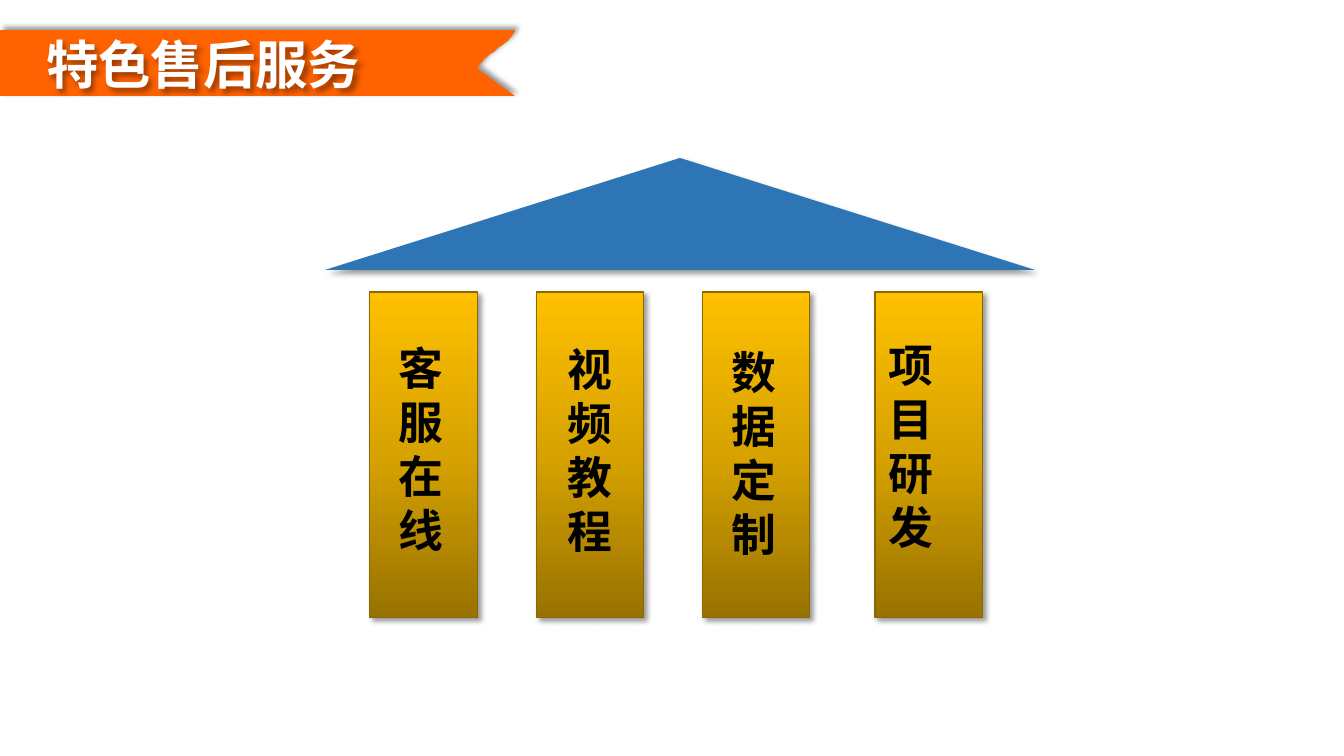
from copy import deepcopy
from dataclasses import dataclass

from lxml.etree import SubElement
from pptx import Presentation
from pptx.dml.color import RGBColor
from pptx.enum.shapes import MSO_SHAPE
from pptx.enum.text import MSO_ANCHOR as Anchor, MSO_AUTO_SIZE as Fit, PP_ALIGN as Align
from pptx.oxml.ns import qn
from pptx.util import Pt

PX = 914400 / 100.8
FONT = "Noto Sans CJK SC"
GOLD = ((0, "977200"), (0.5, "D7A200"), (1, "FFC000"))


@dataclass
class Pillar:
    """A column of the house, with the box of its label."""
    text: str
    left: int
    wide: int
    text_left: int
    text_top: int
    text_wide: int


PILLARS = [
    Pillar("客服在线", 370, 108, 389, 332, 70),
    Pillar("视频教程", 537, 107, 558, 333, 37),
    Pillar("数据定制", 703, 107, 722, 336, 78),
    Pillar("项目研发", 875, 108, 879, 329, 88),
]


def px(num: float) -> int:
    """Turn px into EMU."""
    return round(num * PX)


def paint(code: str) -> RGBColor:
    """Turn a hex string into a colour."""
    return RGBColor.from_string(code)


def shade(shape, angle: int) -> None:
    """Give a shape a soft black shadow cast at an angle."""
    shape.shadow.inherit = False
    effects = shape.element.spPr.find(qn("a:effectLst"))
    cast = SubElement(effects, qn("a:outerShdw"), blurRad=str(Pt(4)), dist=str(Pt(3)),
                      dir=str(angle * 60000), algn="ctr", rotWithShape="0")
    tint = SubElement(cast, qn("a:srgbClr"), val="000000")
    SubElement(tint, qn("a:alpha"), val="40000")


def write(frame, text: str, size: float, code: str) -> None:
    """Put bold text in a frame."""
    frame.text = text
    frame.word_wrap = True
    for run in frame.paragraphs[0].runs:
        font = run.font
        font.size, font.bold, font.name = Pt(size), True, FONT
        font.color.rgb = paint(code)
        SubElement(run.font._element, qn("a:ea"), typeface=FONT)


def outline(shapes, points: list, code: str, angle: int) -> None:
    """Draw a closed, filled outline through points in px."""
    first, *rest = points
    build = shapes.build_freeform(*first, scale=PX)
    build.add_line_segments(rest, close=True)
    shape = build.convert_to_shape()
    shape.fill.solid()
    shape.fill.fore_color.rgb = paint(code)
    shape.line.fill.background()
    shade(shape, angle)


def curve(ends: list, steps: int = 24) -> list:
    """List points along a cubic curve."""
    def spot(part: float) -> tuple:
        """Find one point of the curve."""
        back = 1 - part
        loads = (back ** 3, 3 * back ** 2 * part, 3 * back * part ** 2, part ** 3)
        return tuple(sum(load * end[axis] for load, end in zip(loads, ends))
                     for axis in (0, 1))
    return [spot(step / steps) for step in range(steps + 1)]


def draw_pillar(shapes, pillar: Pillar) -> None:
    """Draw the golden column."""
    shape = shapes.add_shape(MSO_SHAPE.RECTANGLE, px(pillar.left), px(292),
                             px(pillar.wide), px(326))
    fill = shape.fill
    fill.gradient()
    fill.gradient_angle = 90
    stops = shape.element.spPr.find(qn("a:gradFill")).find(qn("a:gsLst"))
    stops.append(deepcopy(stops[0]))
    for stop, (place, code) in zip(fill.gradient_stops, GOLD):
        stop.position = place
        stop.color.rgb = paint(code)
    shape.line.color.rgb = paint("8A6900")
    shape.line.width = Pt(0.75)
    shade(shape, 45)


def draw_label(shapes, pillar: Pillar) -> None:
    """Write the label, one sign to a line."""
    box = shapes.add_textbox(px(pillar.text_left), px(pillar.text_top),
                             px(pillar.text_wide), px(228))
    frame = box.text_frame
    write(frame, pillar.text, 32, "000000")
    frame.margin_top, frame.margin_bottom = px(9), px(4)
    frame.paragraphs[0].line_spacing = Pt(38.4)
    frame.auto_size = Fit.SHAPE_TO_FIT_TEXT


def draw_title(slide) -> None:
    """Place the title over the banner."""
    title = slide.shapes.title
    title.left, title.top, title.width, title.height = map(px, (36, 26, 489, 83))
    frame = title.text_frame
    write(frame, "特色售后服务", 37.4, "FFFFFF")
    frame.auto_size = Fit.NONE
    frame.vertical_anchor = Anchor.MIDDLE
    frame.paragraphs[0].alignment = Align.LEFT
    frame.paragraphs[0].line_spacing = 0.9
    shade(title, 45)
    slide.shapes.element.append(title.element)


def main() -> None:
    """Build and save the slide."""
    deck = Presentation()
    deck.slide_width, deck.slide_height = px(1344), px(756)
    slide = deck.slides.add_slide(deck.slide_layouts[5])
    shapes = slide.shapes
    notch = curve([(515, 30), (515, 41), (479, 57), (478, 69)])
    outline(shapes, [(0, 30), *notch, (515, 96), (0, 96)], "FF6200", 315)
    draw_title(slide)
    for pillar in PILLARS:
        draw_pillar(shapes, pillar)
    outline(shapes, [(680, 158), (325, 270), (1035, 270)], "2E75B6", 45)
    for pillar in PILLARS:
        draw_label(shapes, pillar)
    deck.save("out.pptx")


if __name__ == "__main__":
    main()
